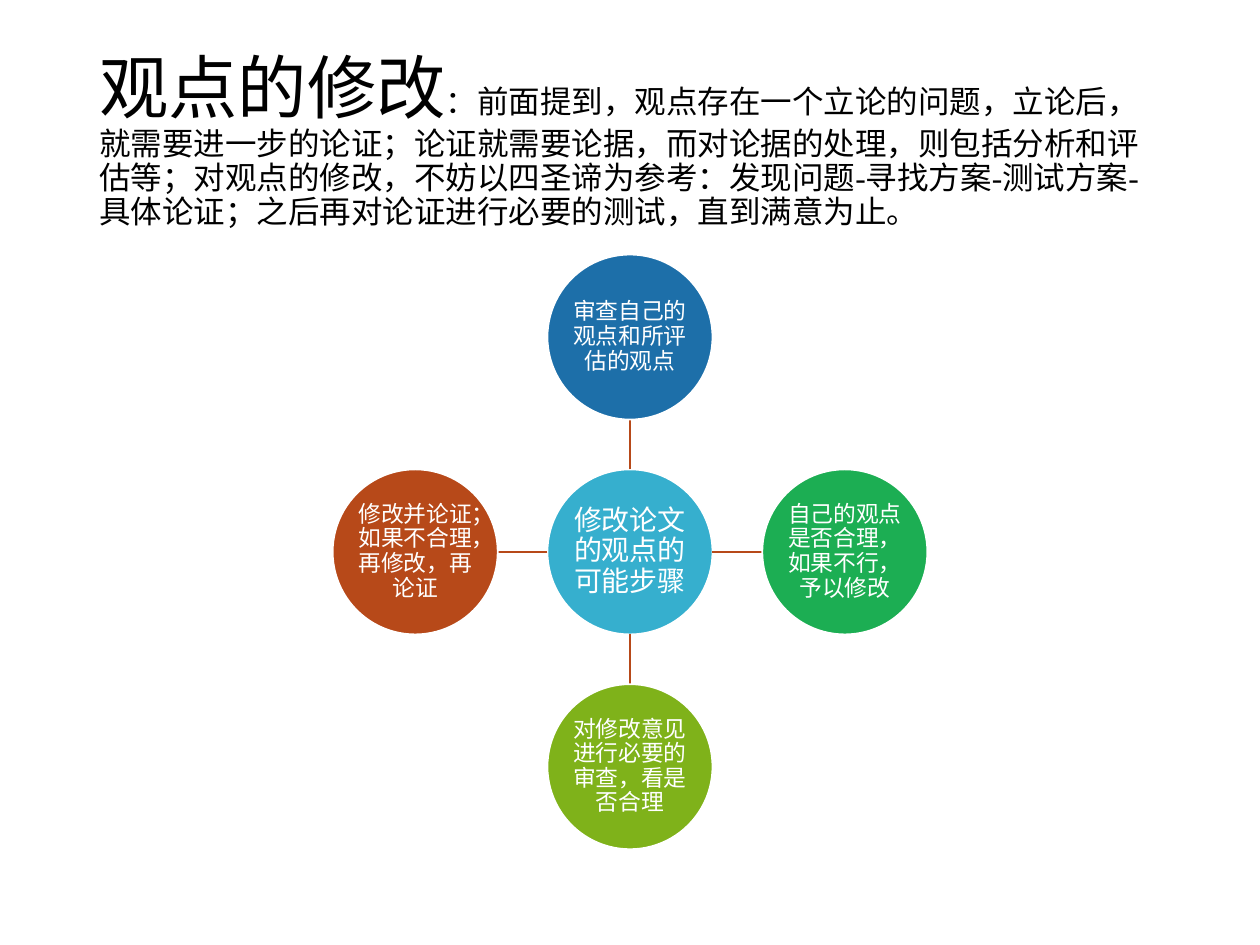
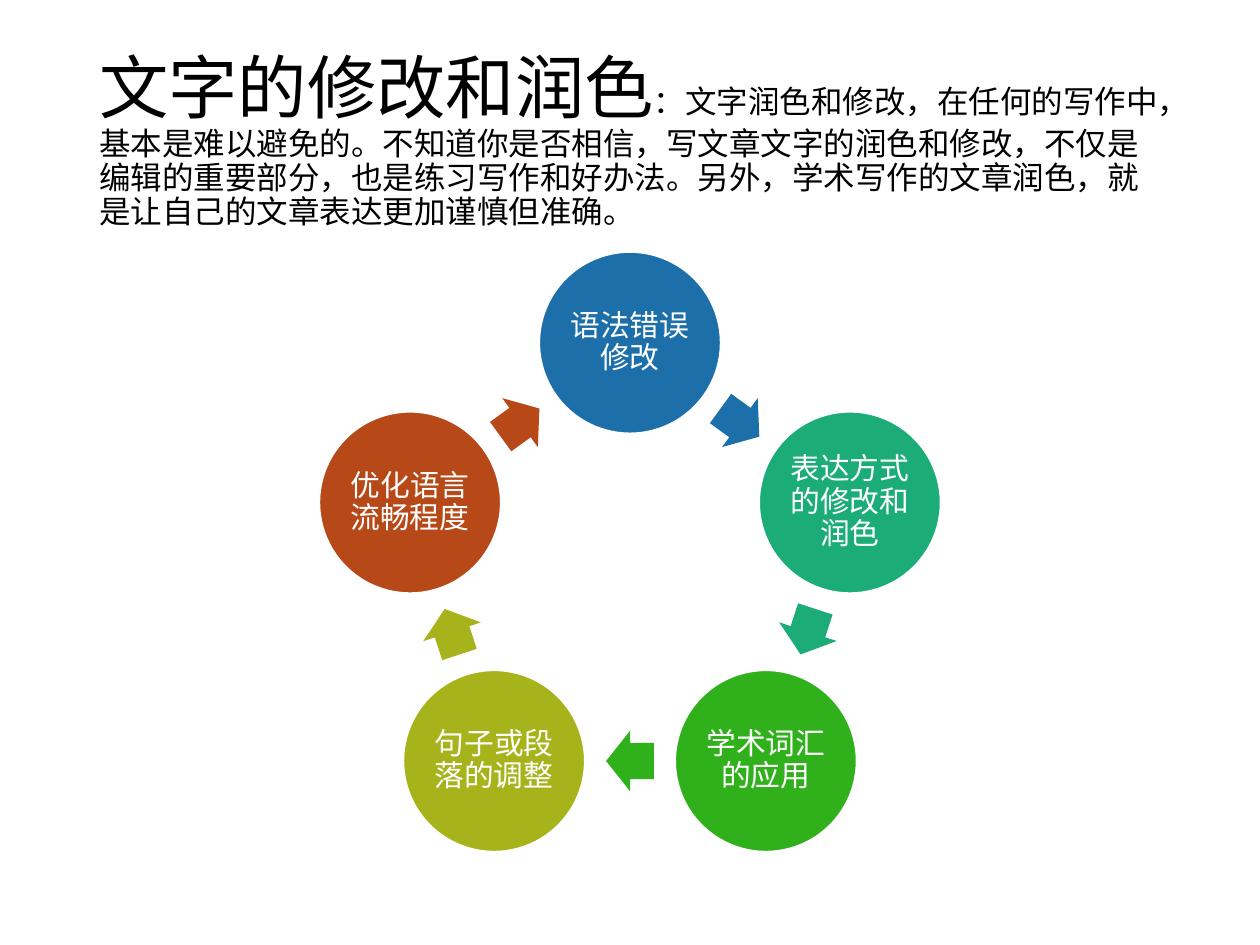
from dataclasses import dataclass
from math import cos, radians, sin

from lxml import etree
from pptx import Presentation
from pptx.dml.color import RGBColor
from pptx.enum.lang import MSO_LANGUAGE_ID
from pptx.enum.shapes import MSO_CONNECTOR, MSO_SHAPE
from pptx.enum.text import MSO_ANCHOR, PP_ALIGN
from pptx.oxml.ns import qn
from pptx.util import Inches, Pt

# Enum members
ELLIPSE, ARROW = MSO_SHAPE.OVAL, MSO_SHAPE.RIGHT_ARROW
STRAIGHT = MSO_CONNECTOR.STRAIGHT
MIDDLE, CENTER = MSO_ANCHOR.MIDDLE, PP_ALIGN.CENTER
CHINESE = MSO_LANGUAGE_ID.SIMPLIFIED_CHINESE

# Shared style
FONT = "Times New Roman"
BLACK = RGBColor(0x00, 0x00, 0x00)
WHITE = RGBColor(0xFF, 0xFF, 0xFF)
BLUE = RGBColor(0x1D, 0x6F, 0xA9)
CYAN = RGBColor(0x36, 0xAF, 0xCE)
TEAL = RGBColor(0x1C, 0xAC, 0x78)
GREEN = RGBColor(0x1C, 0xAE, 0x53)
GRASS = RGBColor(0x30, 0xB0, 0x1B)
LIME = RGBColor(0x7F, 0xB2, 0x1A)
OLIVE = RGBColor(0xA7, 0xB3, 0x1A)
RUST = RGBColor(0xB7, 0x49, 0x19)
HEADING_SIZE, INTRO_SIZE = 39.6, 18
LINE_SPACING = 0.9

# Grid: 100 columns by 75 rows of square cells
COLUMNS, ROWS = 100, 75
WIDTH, HEIGHT = Inches(10), Inches(7.5)
CELL = WIDTH / COLUMNS


@dataclass(frozen=True)
class Step:
    text: str
    color: RGBColor


@dataclass(frozen=True)
class Ring:
    """Circles placed clockwise from the top; lengths in grid cells."""
    row: float
    radius: float
    diameter: float
    inset: float
    size: float
    steps: tuple[Step, ...]

    @property
    def turn(self) -> float:
        return 360 / len(self.steps)

    def point(self, angle: float, distance: float) -> tuple[float, float]:
        a = radians(angle)
        return COLUMNS / 2 + distance * sin(a), self.row - distance * cos(a)


HUB = Step("修改论文的观点的可能步骤", CYAN)
HUB_SIZE = 16
REVISION = Ring(43.8, 17.05, 13.1, 0.1, 13, (
    Step("审查自己的观点和所评估的观点", BLUE),
    Step("自己的观点是否合理，如果不行，予以修改", GREEN),
    Step("对修改意见进行必要的审查，看是否合理", LIME),
    Step("修改并论证；如果不合理，再修改，再论证", RUST),
))
POLISHING = Ring(45.55, 18.35, 14.4, 0.2, 17, (
    Step("语法错误修改", BLUE),
    Step("表达方式的修改和润色", TEAL),
    Step("学术词汇的应用", GRASS),
    Step("句子或段落的调整", OLIVE),
    Step("优化语言流畅程度", RUST),
))
ARROW_LENGTH, ARROW_WIDTH = 3.8, 4.8


def cells(n: float) -> int:
    return round(n * CELL)


def style(p, color: RGBColor) -> None:
    p.line_spacing = LINE_SPACING
    p.font.name = FONT
    p.font.color.rgb = color
    p.font.language_id = CHINESE


def add_title(s, heading: str, intro: str) -> None:
    tf = s.shapes.add_textbox(cells(6.9), cells(4), cells(86.2), cells(14.5)).text_frame
    tf.word_wrap = True
    tf.vertical_anchor = MIDDLE
    p = tf.paragraphs[0]
    style(p, BLACK)
    for text, size in ((heading, HEADING_SIZE), (intro, INTRO_SIZE)):
        r = p.add_run()
        r.text = text
        r.font.size = Pt(size)


def add_centred(s, kind, center: tuple[float, float], width: float,
                height: float, color: RGBColor):
    x, y = center
    sp = s.shapes.add_shape(kind, cells(x - width / 2), cells(y - height / 2),
                            cells(width), cells(height))
    sp.shadow.inherit = False
    sp.fill.solid()
    sp.fill.fore_color.rgb = color
    return sp


def add_circle(s, ring: Ring, step: Step, center: tuple[float, float], size: float) -> None:
    sp = add_centred(s, ELLIPSE, center, ring.diameter, ring.diameter, step.color)
    sp.line.color.rgb = WHITE
    sp.line.width = Pt(1)
    tf = sp.text_frame
    tf.word_wrap = True
    tf.vertical_anchor = MIDDLE
    tf.margin_left = tf.margin_right = tf.margin_top = tf.margin_bottom = cells(ring.inset)
    p = tf.paragraphs[0]
    p.text = step.text
    p.alignment = CENTER
    style(p, WHITE)
    p.font.size = Pt(size)


def add_spoke(s, ring: Ring, angle: float) -> None:
    edge = ring.diameter / 2
    ends = ring.point(angle, edge) + ring.point(angle, ring.radius - edge)
    line = s.shapes.add_connector(STRAIGHT, *map(cells, ends))
    line.line.color.rgb = RUST
    line.line.width = Pt(1)
    etree.SubElement(line._element.spPr, qn("a:effectLst"))


def add_cycle_arrow(s, ring: Ring, angle: float, color: RGBColor) -> None:
    half = ring.turn / 2
    center = ring.point(angle + half, ring.radius * cos(radians(half)))
    sp = add_centred(s, ARROW, center, ARROW_LENGTH, ARROW_WIDTH, color)
    sp.adjustments[0], sp.adjustments[1] = 0.6, 0.5
    sp.line.fill.background()
    sp.rotation = angle + half


def build_revision(s) -> None:
    add_title(s, "观点的修改", "：前面提到，观点存在一个立论的问题，立论后，就需要进一步的论证；"
              "论证就需要论据，而对论据的处理，则包括分析和评估等；对观点的修改，不妨以四圣谛为参考："
              "发现问题-寻找方案-测试方案-具体论证；之后再对论证进行必要的测试，直到满意为止。")
    ring = REVISION
    add_circle(s, ring, HUB, ring.point(0, 0), HUB_SIZE)
    for i, step in enumerate(ring.steps):
        angle = i * ring.turn
        add_spoke(s, ring, angle)
        add_circle(s, ring, step, ring.point(angle, ring.radius), ring.size)


def build_polishing(s) -> None:
    add_title(s, "文字的修改和润色", "：文字润色和修改，在任何的写作中，基本是难以避免的。"
              "不知道你是否相信，写文章文字的润色和修改，不仅是编辑的重要部分，也是练习写作和好办法。"
              "另外，学术写作的文章润色，就是让自己的文章表达更加谨慎但准确。")
    ring = POLISHING
    for i, step in enumerate(ring.steps):
        angle = i * ring.turn
        add_circle(s, ring, step, ring.point(angle, ring.radius), ring.size)
        add_cycle_arrow(s, ring, angle, step.color)


def main() -> None:
    prs = Presentation()
    prs.slide_width, prs.slide_height = WIDTH, HEIGHT
    blank = prs.slide_layouts[6]
    for build in (build_revision, build_polishing):
        build(prs.slides.add_slide(blank))
    prs.save("out.pptx")


if __name__ == "__main__":
    main()
